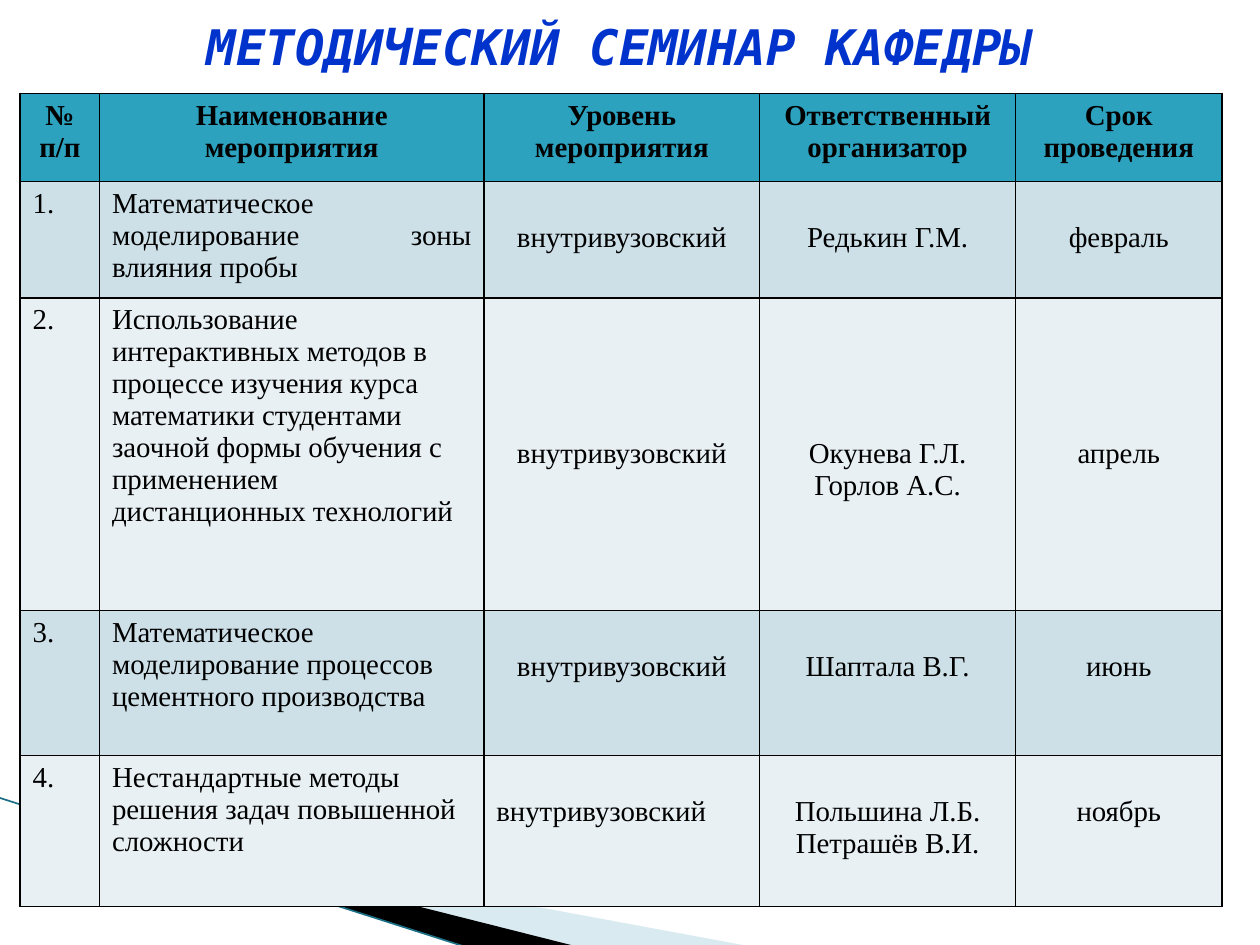
from lxml.etree import SubElement as Sub
from pptx import Presentation
from pptx.dml.color import RGBColor as Rgb
from pptx.enum.shapes import MSO_CONNECTOR as Conn
from pptx.enum.text import PP_ALIGN as Align
from pptx.oxml import parse_xml as to_xml
from pptx.oxml.ns import nsdecls, qn
from pptx.util import Inches, Pt

HUES = {"title": "0033CC", "ink": "000000", "head": "2DA2BF", "odd": "CDE0E8",
        "even": "E8F0F4", "wave": "A0CBDC", "line": "1B6F85"}
C, J, L = Align.CENTER, Align.JUSTIFY, Align.LEFT


def hue(name):
    return Rgb.from_string(HUES[name])


def style(para, align, form, color):
    para.alignment = align
    for key, value in form.items():
        setattr(para.font, key, value)
    para.font.color.rgb = hue(color)


deck = Presentation()
deck.slide_width, deck.slide_height = Inches(10), Inches(7.5)
slide = deck.slides.add_slide(deck.slide_layouts[6])
shapes = slide.shapes

# Waves in the lower corner
waves = [
    ("wave", [(0.55, 6.51), (5.95, 7.51), (4.56, 7.51), (0.55, 6.5)]),
    ("ink", [(0.53, 6.49), (4.57, 7.51), (3.72, 7.52), (0.54, 6.5)]),
]
for color, spots in waves:
    spots = [(Inches(x), Inches(y)) for x, y in spots]
    form = shapes.build_freeform(*spots[0])
    form.add_line_segments(spots[1:], close=True)
    wave = form.convert_to_shape()
    wave.shadow.inherit = False
    wave.fill.solid()
    wave.fill.fore_color.rgb = hue(color)
    wave.line.fill.background()
    if color == "wave":
        tint = wave._element.spPr.find(".//" + qn("a:srgbClr"))
        Sub(tint, qn("a:alpha"), val="40000")

edge = shapes.add_connector(Conn.STRAIGHT, Inches(-0.01), Inches(6.33),
                            Inches(3.71), Inches(7.52))
edge.line.color.rgb = hue("line")
edge.line.width = Pt(0.95)
Sub(edge._element.spPr, qn("a:effectLst"))

# Title
box = shapes.add_textbox(Inches(0.11), Inches(0.08), Inches(9.61), Inches(0.57))
box.text_frame.word_wrap = True
title = box.text_frame.paragraphs[0]
title.text = "МЕТОДИЧЕСКИЙ СЕМИНАР КАФЕДРЫ"
style(title, C, {"name": "DejaVu Sans Mono", "size": Pt(28), "bold": True,
                 "italic": True}, "title")

# Seminar table
LEVEL = "внутривузовский"
rows = [
    ["№ п/п", "Наименование мероприятия", "Уровень мероприятия",
     "Ответственный организатор", "Срок\nпроведения"],
    ["1.", "Математическое моделирование зоны влияния пробы", LEVEL,
     "Редькин Г.М.", "февраль"],
    ["2.", "Использование интерактивных методов в процессе изучения курса "
     "математики студентами заочной формы обучения с применением "
     "дистанционных технологий", LEVEL, "Окунева Г.Л.\nГорлов А.С.", "апрель"],
    ["3.", "Математическое моделирование процессов цементного производства",
     LEVEL, "Шаптала В.Г.", "июнь"],
    ["4.", "Нестандартные методы решения задач повышенной сложности", LEVEL,
     "Польшина Л.Б.\nПетрашёв В.И.", "ноябрь"],
]
wides = [0.63, 3.05, 2.19, 2.03, 1.64]
highs = [0.7, 0.92, 2.48, 1.15, 1.2]
drops = [0.05, 0.32, 1.11, 0.32, 0.32]  # top margin of the last three columns

frame = shapes.add_table(len(rows), len(wides), Inches(0.16), Inches(0.74),
                         Inches(sum(wides)), Inches(sum(highs)))
table = frame.table
for col, wide in zip(table.columns, wides):
    col.width = Inches(wide)
for row, high in zip(table.rows, highs):
    row.height = Inches(high)

for r, texts in enumerate(rows):
    for c, text in enumerate(texts):
        cell = table.cell(r, c)
        cell.text = text
        cell.margin_top = Inches(drops[r] if c > 1 else 0.05)
        cell.fill.solid()
        cell.fill.fore_color.rgb = hue("head" if r == 0 else
                                       "odd" if r % 2 else "even")
        if r == 0:
            align = C
        elif c == 0 or (r, c) in [(1, 1), (4, 2)]:
            align = J
        else:
            align = L if c == 1 else C
        for para in cell.text_frame.paragraphs:
            style(para, align, {"name": "Times New Roman", "size": Pt(16.5),
                                "bold": r == 0}, "ink")
        # Borders come before the fill
        props = cell._tc.get_or_add_tcPr()
        for i, side in enumerate(["lnL", "lnR", "lnT", "lnB"]):
            props.insert(i, to_xml(
                f'<a:{side} {nsdecls("a")} w="{Pt(1)}"><a:solidFill>'
                f'<a:srgbClr val="{HUES["ink"]}"/></a:solidFill></a:{side}>'))

deck.save("out.pptx")
